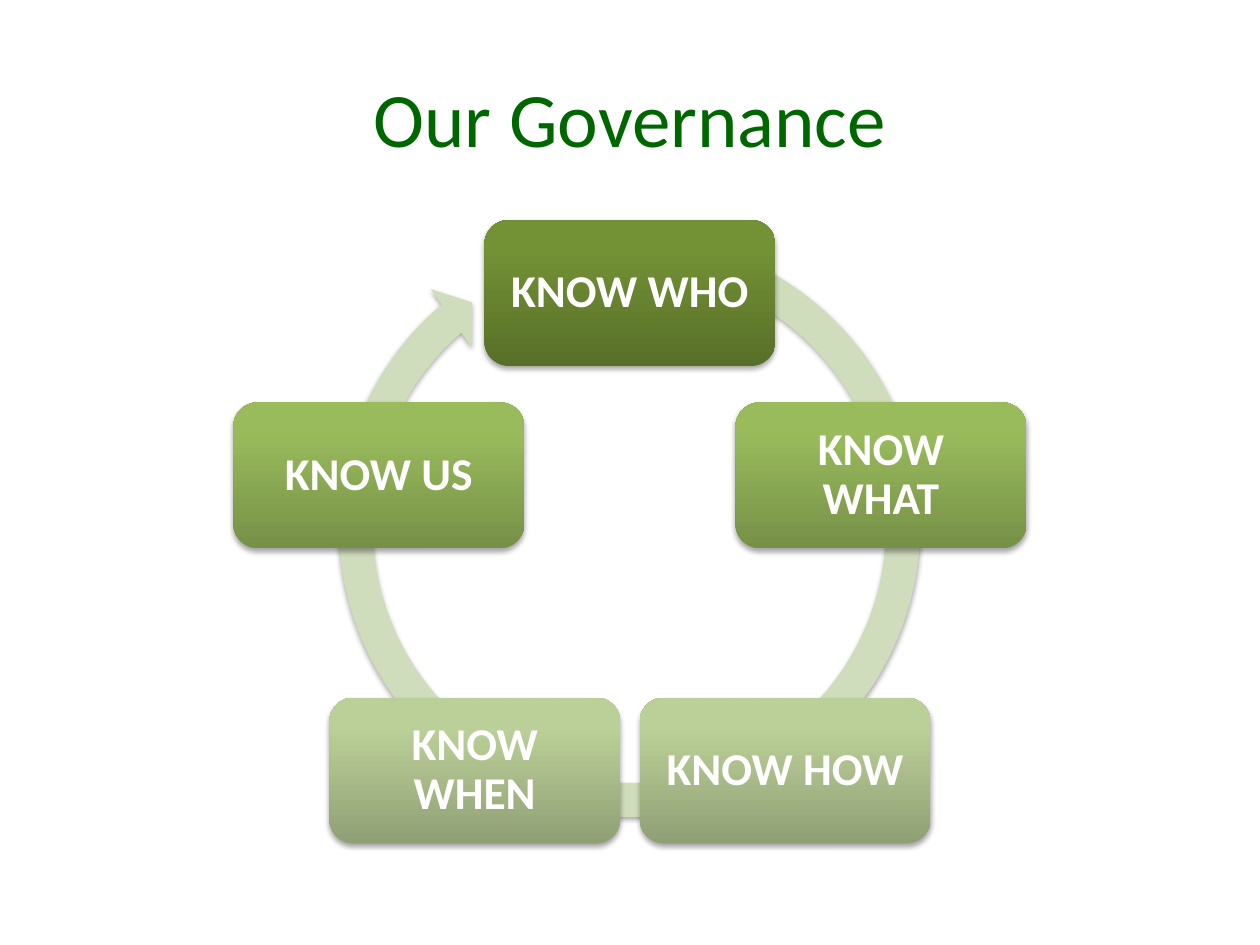
"""Build the "Our Governance" slide: five steps on a circular arrow."""
from dataclasses import dataclass
from math import cos, pi, sin

from lxml import etree
from pptx import Presentation
from pptx.dml.color import RGBColor
from pptx.enum.shapes import MSO_SHAPE as Preset
from pptx.enum.text import MSO_ANCHOR as Anchor, PP_ALIGN as Align
from pptx.oxml import parse_xml
from pptx.oxml.ns import nsdecls, qn
from pptx.util import Pt

TITLE = "Our Governance"
STEPS = [
    ("KNOW WHO", "dark"),
    ("KNOW WHAT", "medium"),
    ("KNOW HOW", "light"),
    ("KNOW WHEN", "light"),
    ("KNOW US", "medium"),
]

EMU_PER_PX = 914400 // 126
SLIDE_SIZE = (1260, 945)
TITLE_BOX = (63, 38, 1134, 157)
ARROW_BOX = (320, 217, 619, 619)
ARROW_WIDTH, ARROW_HEAD = 5.5, 5.8
ARROW_ANGLES = (5.51, 229.43, 289.87)
RING_CENTER, RING_RADIUS = (630, 557), 264
STEP_SIZE = (291, 146)
STEP_INSET = 14


@dataclass(frozen=True)
class Theme:
    font: str = "Calibri"
    title_size: int = 44
    step_size: int = 26
    title: str = "006600"
    step_text: str = "FFFFFF"
    arrow: str = "D0DDBC"
    shadow: str = "000000"
    dark: tuple = ("586F29", "739135", "749334")
    medium: tuple = ("769047", "99BB5C", "9ABD5B")
    light: tuple = ("90A075", "BBD098", "BCD298")


THEME = Theme()


def px(*lengths):
    return [round(length * EMU_PER_PX) for length in lengths]


def write(frame, text, *, size, color, bold=False, spacing=1.0, inset=None):
    frame.word_wrap = True
    frame.vertical_anchor = Anchor.MIDDLE
    if inset is not None:
        (margin,) = px(inset)
        frame.margin_left = frame.margin_right = margin
        frame.margin_top = frame.margin_bottom = margin
    paragraph = frame.paragraphs[0]
    paragraph.alignment = Align.CENTER
    paragraph.line_spacing = spacing
    run = paragraph.add_run()
    run.text = text
    run.font.name = THEME.font
    run.font.size = Pt(size)
    run.font.bold = bold
    run.font.color.rgb = RGBColor.from_string(color)


def add_shadowed(slide, preset, box):
    shape = slide.shapes.add_shape(preset, *px(*box))
    shape.line.fill.background()
    shape.shadow.inherit = False
    effects = shape._element.spPr.find(qn("a:effectLst"))
    shadow = etree.SubElement(
        effects, qn("a:outerShdw"), blurRad="40000", dist="23000",
        dir="5400000", rotWithShape="0")
    color = etree.SubElement(shadow, qn("a:srgbClr"), val=THEME.shadow)
    etree.SubElement(color, qn("a:alpha"), val="35000")
    return shape


def fill_gradient(shape, colors):
    stops = "".join(
        f'<a:gs pos="{position}"><a:srgbClr val="{color}"/></a:gs>'
        for position, color in zip((0, 80000, 100000), colors))
    gradient = parse_xml(
        f'<a:gradFill {nsdecls("a")} rotWithShape="1"><a:gsLst>{stops}</a:gsLst>'
        '<a:lin ang="16200000" scaled="0"/></a:gradFill>')
    shape._element.spPr.find(qn("a:ln")).addprevious(gradient)


def add_arrow(slide):
    arrow = add_shadowed(slide, Preset.CIRCULAR_ARROW, ARROW_BOX)
    arrow.fill.solid()
    arrow.fill.fore_color.rgb = RGBColor.from_string(THEME.arrow)
    angles = [angle * 0.6 for angle in ARROW_ANGLES]
    values = [ARROW_WIDTH / 100, *angles, ARROW_HEAD / 100]
    for index, value in enumerate(values):
        arrow.adjustments[index] = value


def add_step(slide, index, text, shade):
    angle = 2 * pi * index / len(STEPS)
    width, height = STEP_SIZE
    left = RING_CENTER[0] + RING_RADIUS * sin(angle) - width / 2
    top = RING_CENTER[1] - RING_RADIUS * cos(angle) - height / 2
    step = add_shadowed(slide, Preset.ROUNDED_RECTANGLE, (left, top, width, height))
    fill_gradient(step, getattr(THEME, shade))
    write(step.text_frame, text, size=THEME.step_size, color=THEME.step_text,
          bold=True, spacing=0.9, inset=STEP_INSET)


def main():
    presentation = Presentation()
    presentation.slide_width, presentation.slide_height = px(*SLIDE_SIZE)
    slide = presentation.slides.add_slide(presentation.slide_layouts[5])
    title = slide.shapes.title
    title.left, title.top, title.width, title.height = px(*TITLE_BOX)
    write(title.text_frame, TITLE, size=THEME.title_size, color=THEME.title)
    add_arrow(slide)
    for index, (text, shade) in enumerate(STEPS):
        add_step(slide, index, text, shade)
    presentation.save("out.pptx")


if __name__ == "__main__":
    main()
